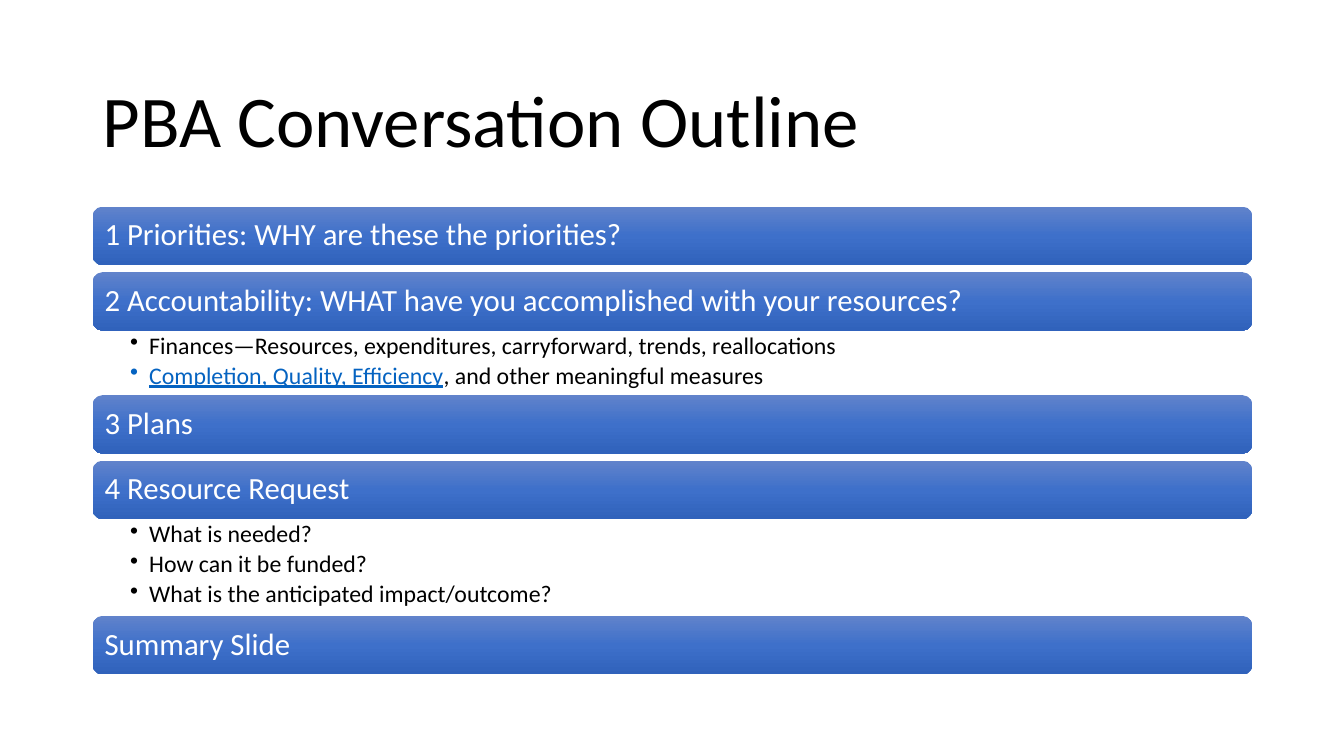
import copy

import pptx
import pptx.dml.color
import pptx.enum.shapes
import pptx.enum.text
import pptx.oxml
import pptx.oxml.ns
import pptx.util

RGB = pptx.dml.color.RGBColor
BLACK = RGB(0x00, 0x00, 0x00)
WHITE = RGB(0xFF, 0xFF, 0xFF)
LINK = RGB(0x05, 0x63, 0xC1)
LIGHT = RGB(0x61, 0x83, 0xCB)
MID = RGB(0x3E, 0x70, 0xCA)
DARK = RGB(0x30, 0x62, 0xBB)

SCALE = 9144  # EMU in one px, 100 px to the inch
LEFT, WIDE = 92, 1150
TOP, BAR, GAP, ROW = 205, 58, 7, 32

TOPICS = [
    ("1 Priorities: WHY are these the priorities?", []),
    ("2 Accountability: WHAT have you accomplished with your resources?", [
        [("Finances—Resources, expenditures, carryforward, trends, reallocations", {})],
        [("Completion, Quality, Efficiency", {"color": LINK, "underline": True}),
         (", and other meaningful measures", {})],
    ]),
    ("3 Plans", []),
    ("4 Resource Request", [
        [("What is needed?", {})],
        [("How can it be funded?", {})],
        [("What is the anticipated impact/outcome?", {})],
    ]),
    ("Summary Slide", []),
]


def px(num):
    return pptx.util.Emu(num * SCALE)


class Deck:
    def __init__(self):
        self.show = pptx.Presentation()
        self.show.slide_width, self.show.slide_height = px(1333), px(750)
        self.slide = self.show.slides.add_slide(self.show.slide_layouts[6])
        self.font = "Calibri"

    def frame(self, shape, pad, mid=True):
        """Set the insets (left, top, right, bottom) and anchor of a shape's text."""
        text = shape.text_frame
        anchor = pptx.enum.text.MSO_ANCHOR
        sides = ("margin_left", "margin_top", "margin_right", "margin_bottom")
        form = dict(zip(sides, map(px, pad)), word_wrap=True,
                    vertical_anchor=anchor.MIDDLE if mid else anchor.TOP)
        for key, value in form.items():
            setattr(text, key, value)
        return text

    def fill_para(self, para, runs, size, color):
        form = {"alignment": pptx.enum.text.PP_ALIGN.LEFT, "line_spacing": 0.9}
        for key, value in form.items():
            setattr(para, key, value)
        for words, extra in runs:
            run = para.add_run()
            run.text = words
            style = {"name": self.font, "size": pptx.util.Pt(size), **extra}
            run.font.color.rgb = style.pop("color", color)
            for key, value in style.items():
                setattr(run.font, key, value)

    def box(self, top, high):
        return self.slide.shapes.add_textbox(px(LEFT), px(top), px(WIDE), px(high))

    def title(self, words):
        text = self.frame(self.box(61, 124), (10, 5, 10, 5))
        self.fill_para(text.paragraphs[0], [(words, {})], 52, BLACK)

    def bar(self, top, words):
        shape = self.slide.shapes.add_shape(
            pptx.enum.shapes.MSO_SHAPE.ROUNDED_RECTANGLE,
            px(LEFT), px(top), px(WIDE), px(BAR))
        shape.shadow.inherit = False
        shape.line.fill.background()
        self.shade(shape)
        text = self.frame(shape, (9, 9, 9, 9))
        self.fill_para(text.paragraphs[0], [(words, {})], 22, WHITE)

    def shade(self, shape):
        """Fill a shape with a three-stop gradient from top to bottom."""
        shape.fill.gradient()
        shape.fill.gradient_angle = 270
        stops = shape.element.xpath(".//a:gsLst")[0]
        stops.insert(1, copy.deepcopy(stops[0]))
        tones = ((0, LIGHT), (0.5, MID), (1, DARK))
        for stop, (place, tone) in zip(shape.fill.gradient_stops, tones):
            stop.position = place
            stop.color.rgb = tone

    def points(self, top, rows):
        text = self.frame(self.box(top, ROW * len(rows)), (37, 3, 17, 3), mid=False)
        for num, runs in enumerate(rows):
            para = text.add_paragraph() if num else text.paragraphs[0]
            self.fill_para(para, runs, 17, BLACK)
            para.space_after = pptx.util.Pt(3)
            self.mark(para)

    def mark(self, para):
        """Give a paragraph a hanging bullet."""
        props = para._p.get_or_add_pPr()
        props.set("marL", str(px(19)))
        props.set("indent", str(px(-19)))
        space = pptx.oxml.ns.nsdecls("a")
        props.append(pptx.oxml.parse_xml(f'<a:buChar {space} char="•"/>'))


def main():
    deck = Deck()
    deck.title("PBA Conversation Outline")
    top = TOP
    for words, rows in TOPICS:
        deck.bar(top, words)
        top += BAR
        if rows:
            deck.points(top, rows)
        top += ROW * len(rows) or GAP
    deck.show.save("out.pptx")


if __name__ == "__main__":
    main()
